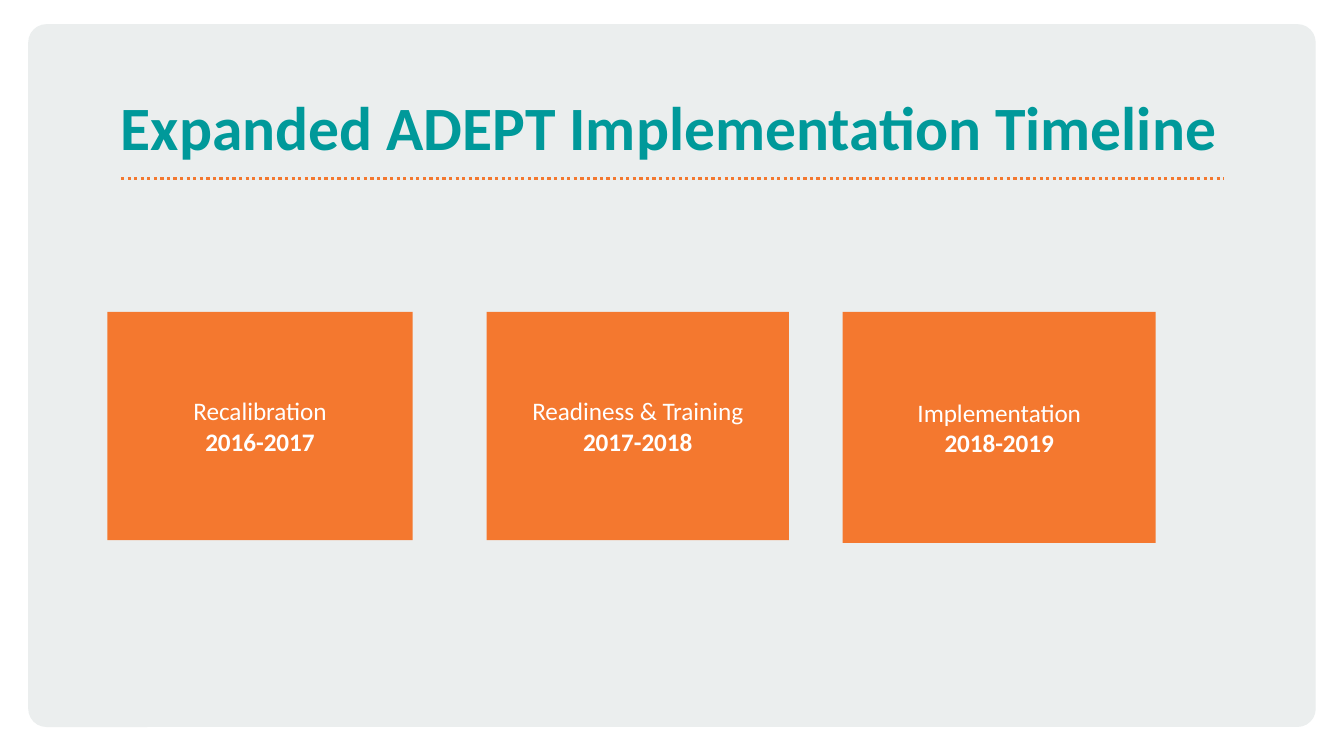
from lxml.etree import SubElement
from pptx import Presentation
from pptx.dml.color import RGBColor
from pptx.enum.dml import MSO_LINE
from pptx.enum.shapes import MSO_CONNECTOR, MSO_SHAPE
from pptx.enum.text import MSO_ANCHOR, MSO_AUTO_SIZE, PP_ALIGN
from pptx.oxml.ns import qn
from pptx.util import Pt

FONT = "Calibri"
TEAL, ORANGE, RULE_ORANGE = "00999A", "F4782F", "F3782F"
PANEL_GREY, WHITE = "EBEEEE", "FFFFFF"

# Phase, years, left, width, height in points
PHASES = [
    ("Recalibration", "2016-2017", 57.6, 163.44, 122.4),
    ("Readiness & Training", "2017-2018", 260.64, 162, 122.4),
    ("Implementation", "2018-2019", 451.44, 167.76, 123.84),
]
PHASE_TOP = 167.04


def color(hex_code):
    return RGBColor.from_string(hex_code)


def add_text(para, text, size, hex_code, bold=False):
    span = para.add_run()
    span.text = text
    span.font.name = FONT
    span.font.size = Pt(size)
    span.font.bold = bold
    span.font.color.rgb = color(hex_code)


def add_block(page, kind, left, top, width, height, fill):
    block = page.shapes.add_shape(kind, Pt(left), Pt(top), Pt(width), Pt(height))
    block.shadow.inherit = False
    block.fill.solid()
    block.fill.fore_color.rgb = color(fill)
    block.line.fill.background()
    return block


def add_rule(page, left, right, y):
    rule = page.shapes.add_connector(
        MSO_CONNECTOR.STRAIGHT, Pt(left), Pt(y), Pt(right), Pt(y))
    rule.line.color.rgb = color(RULE_ORANGE)
    rule.line.width = Pt(1.75)
    rule.line.dash_style = MSO_LINE.ROUND_DOT
    SubElement(rule.element.spPr, qn("a:effectLst"))


def set_title(page, text):
    title = page.shapes.title
    title.left, title.top = Pt(64.8), Pt(11.52)
    title.width, title.height = Pt(590.4), Pt(75.6)
    # Bring the title in front of the panel
    title.element.getparent().append(title.element)
    frame = title.text_frame
    frame.auto_size = MSO_AUTO_SIZE.NONE
    frame.word_wrap = True
    frame.vertical_anchor = MSO_ANCHOR.BOTTOM
    frame.margin_left = frame.margin_right = Pt(0)
    frame.margin_top = frame.margin_bottom = Pt(0)
    para = frame.paragraphs[0]
    para.alignment = PP_ALIGN.LEFT
    para.line_spacing = 0.85
    add_text(para, text, 33, TEAL, bold=True)


def add_phase(page, name, years, left, width, height):
    box = add_block(page, MSO_SHAPE.RECTANGLE, left, PHASE_TOP, width, height, ORANGE)
    frame = box.text_frame
    frame.word_wrap = True
    frame.vertical_anchor = MSO_ANCHOR.MIDDLE
    name_para, years_para = frame.paragraphs[0], frame.add_paragraph()
    add_text(name_para, name, 13.5, WHITE)
    add_text(years_para, years, 13.5, WHITE, bold=True)
    for para in frame.paragraphs:
        para.alignment = PP_ALIGN.CENTER


def main():
    deck = Presentation()
    deck.slide_width, deck.slide_height = Pt(720), Pt(405)
    page = deck.slides.add_slide(deck.slide_layouts[5])

    # Background panel
    panel = add_block(
        page, MSO_SHAPE.ROUNDED_RECTANGLE, 15.12, 12.96, 689.76, 376.56, PANEL_GREY)
    panel.adjustments[0] = 0.026

    # Heading
    add_rule(page, 64.8, 655.92, 95.76)
    set_title(page, "Expanded ADEPT Implementation Timeline")

    # Timeline phases
    for phase in PHASES:
        add_phase(page, *phase)

    deck.save("out.pptx")


if __name__ == "__main__":
    main()
